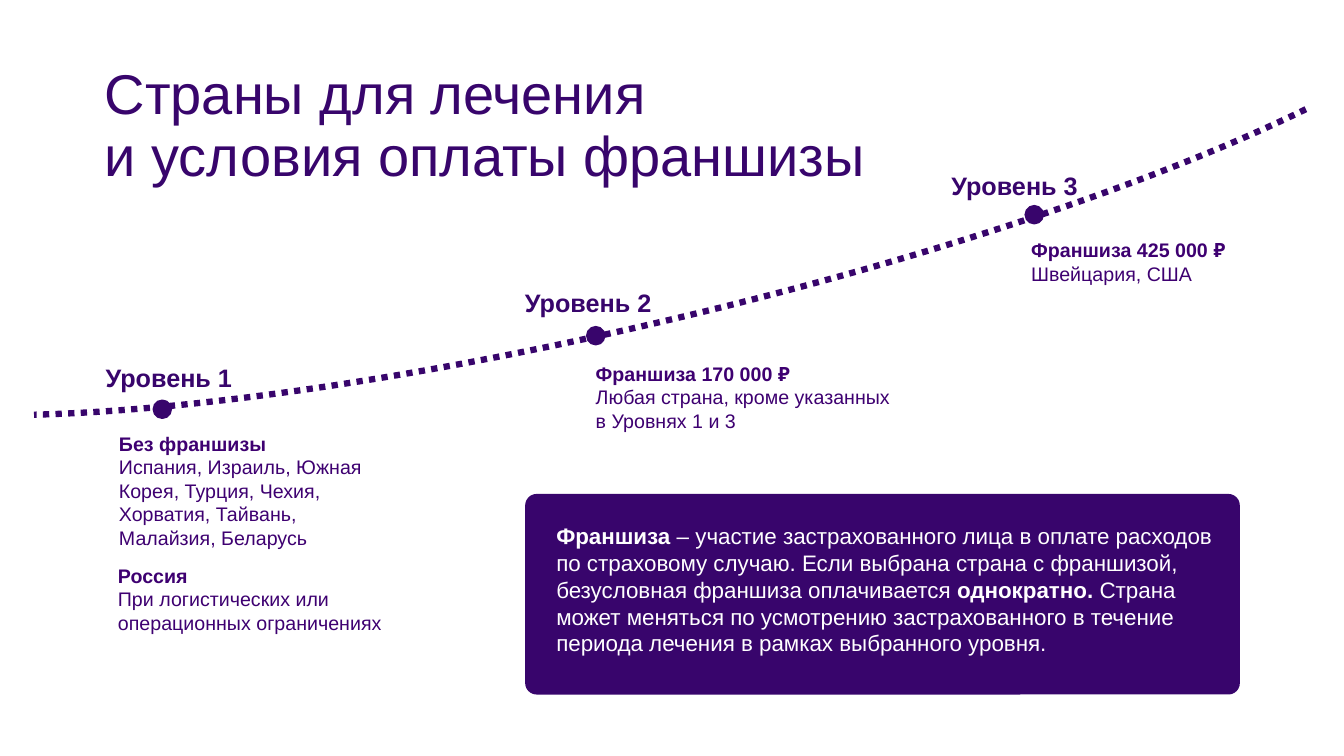
import pptx
import pptx.util
import pptx.dml.color
import pptx.enum.dml
import pptx.enum.shapes
import pptx.enum.text

RGB = pptx.dml.color.RGBColor
PLUM = RGB(0x38, 0x05, 0x6C)
INK = RGB(0x3E, 0x00, 0x71)
WHITE = RGB(0xFF, 0xFF, 0xFF)
KIND = pptx.enum.shapes.MSO_SHAPE
FIT = pptx.enum.text.MSO_AUTO_SIZE
FONT = "Arial"
CELL = pptx.util.Inches(0.1)  # one column or row of the grid
COLS, ROWS = 133.33, 75


def write(frame, paras, size=14, color=INK, lead=1.2, inset=0.06,
          fit=FIT.SHAPE_TO_FIT_TEXT):
    """Fill a frame; each paragraph is a list of (text, bold) runs."""
    frame.word_wrap = True
    frame.auto_size = fit
    frame.vertical_anchor = pptx.enum.text.MSO_ANCHOR.TOP
    frame.margin_left = frame.margin_right = pptx.util.Inches(inset)
    frame.margin_top = frame.margin_bottom = pptx.util.Inches(min(inset, 0.06))
    for num, runs in enumerate(paras):
        para = frame.add_paragraph() if num else frame.paragraphs[0]
        para.alignment = pptx.enum.text.PP_ALIGN.LEFT
        para.line_spacing = pptx.util.Pt(size * lead)
        for text, bold in runs:
            for part, line in enumerate(text.split("\n")):
                if part:
                    para.add_line_break()
                run = para.add_run()
                run.text = line
                run.font.name = FONT
                run.font.size = pptx.util.Pt(size)
                run.font.bold = bold
                run.font.color.rgb = color


class Deck:
    def __init__(self):
        self.show = pptx.Presentation()
        self.show.slide_width = int(COLS * CELL)
        self.show.slide_height = ROWS * CELL
        self.slide = self.show.slides.add_slide(self.show.slide_layouts[5])

    def grid(self, *cells):
        return [int(cell * CELL) for cell in cells]

    def title(self, text, *box):
        head = self.slide.shapes.title
        head.left, head.top, head.width, head.height = self.grid(*box)
        write(head.text_frame, [[(text, False)]], size=40, color=PLUM,
              lead=1.1, inset=0, fit=FIT.NONE)

    def text(self, paras, *box, **style):
        area = self.slide.shapes.add_textbox(*self.grid(*box))
        write(area.text_frame, paras, **style)

    def shape(self, kind, *box, fill=None, line=None, width=1):
        item = self.slide.shapes.add_shape(kind, *self.grid(*box))
        item.shadow.inherit = False
        if fill is None:
            item.fill.background()
        else:
            item.fill.solid()
            item.fill.fore_color.rgb = fill
        if line is None:
            item.line.fill.background()
        else:
            item.line.color.rgb = line
            item.line.width = pptx.util.Pt(width)
        return item

    def panel(self, *box):
        self.shape(KIND.ROUNDED_RECTANGLE, *box, fill=PLUM).adjustments[0] = 0.057

    def curve(self, *box, turn, start, end):
        arc = self.shape(KIND.ARC, *box, line=PLUM, width=4.5)
        arc.rotation = turn
        # Degrees to the library's unit: 60000 per degree over 100000
        arc.adjustments[0] = start * 0.6
        arc.adjustments[1] = end * 0.6
        arc.line.dash_style = pptx.enum.dml.MSO_LINE.ROUND_DOT

    def dot(self, left, top, side=1.8):
        self.shape(KIND.FLOWCHART_CONNECTOR, left, top, side, side,
                   fill=PLUM, line=PLUM)


def terms(head, body):
    return [[(head, True)], [(body, False)]]


# Each level: name, label corner, dot corner
LEVELS = [
    ("Уровень 1", (9.5, 35.3), (15.2, 39.7)),
    ("Уровень 2", (51.1, 27.9), (58.2, 32.4)),
    ("Уровень 3", (93.4, 16.3), (101.7, 20.4)),
]

# Each block of terms: heading, countries, box
TERMS = [
    ("Без франшизы", "Испания, Израиль, Южная Корея, Турция, Чехия, "
     "Хорватия, Тайвань, Малайзия, Беларусь", (11.2, 42.2, 27.1, 12.9)),
    ("Россия", "При логистических или\nоперационных ограничениях",
     (11.1, 55.3, 34.5, 8.2)),
    ("Франшиза 170 000 ₽", "Любая страна, кроме указанных\nв Уровнях 1 и 3",
     (58.5, 35.3, 30.9, 8.2)),
    ("Франшиза 425 000 ₽", "Швейцария, США", (101.7, 23, 31, 5.8)),
]

NOTE = [[
    ("Франшиза", True),
    (" – участие застрахованного лица в оплате расходов по страховому "
     "случаю. Если выбрана страна с франшизой, безусловная франшиза "
     "оплачивается ", False),
    ("однократно.", True),
    (" Страна может меняться по усмотрению застрахованного в течение "
     "периода лечения в рамках выбранного уровня.", False),
]]


def main():
    deck = Deck()
    deck.title("Страны для лечения\nи условия оплаты франшизы",
               10.4, 6.4, 120, 12.3)

    # Rising path with its levels
    deck.curve(-23.1, -0.4, 172.1, 32.5, turn=166.7, start=188.99, end=350.3)
    for name, label, spot in LEVELS:
        deck.dot(*spot)
        deck.text([[(name, True)]], *label, 15.6, 4,
                  size=18, color=PLUM, inset=0.1)

    # Terms of each level
    for head, body, box in TERMS:
        deck.text(terms(head, body), *box)

    # Definition
    deck.panel(52.1, 49, 70.9, 19.9)
    deck.text(NOTE, 54.2, 51.2, 68.9, 14.5, size=16, color=WHITE, inset=0.1)

    deck.show.save("out.pptx")


if __name__ == "__main__":
    main()
